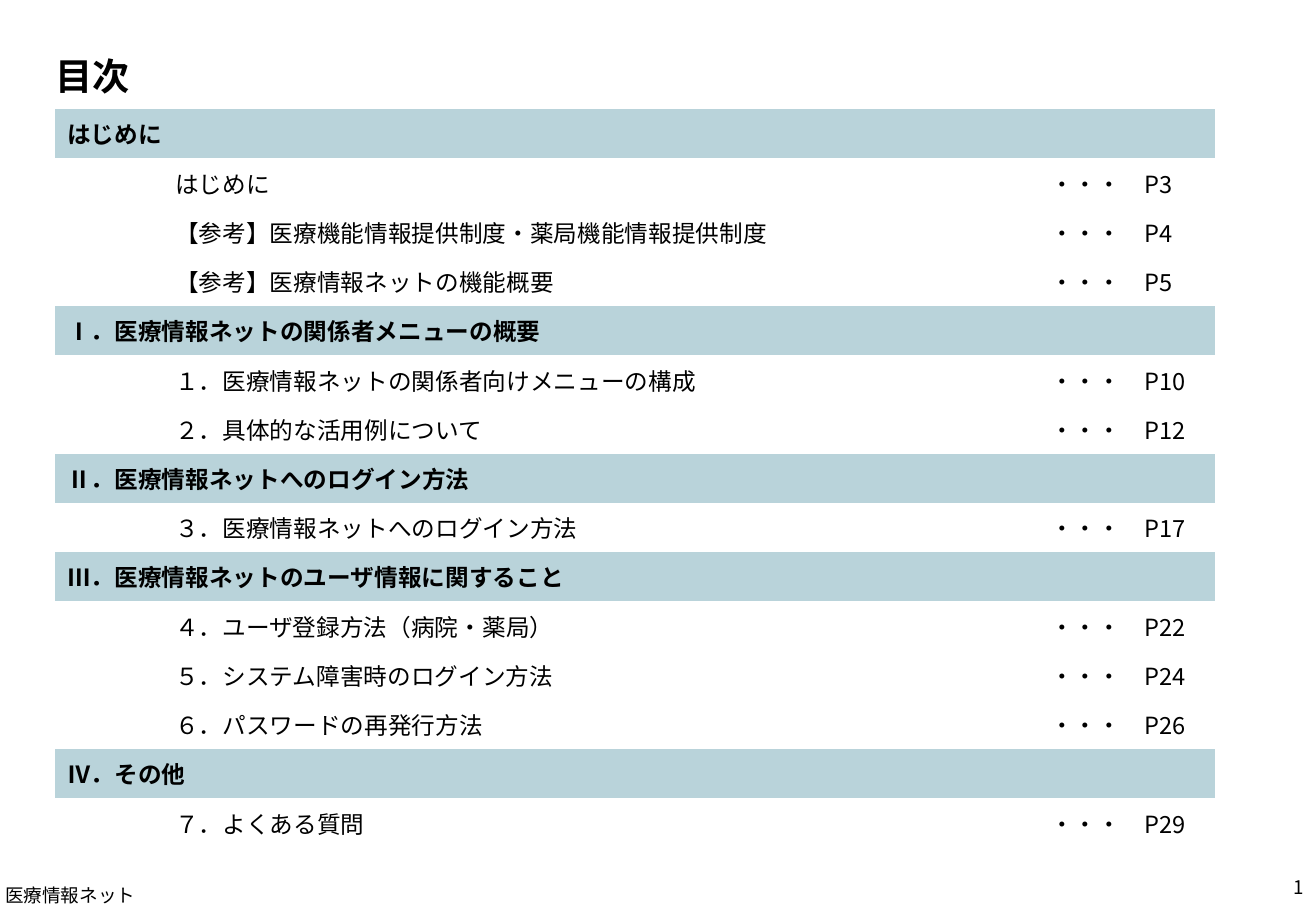
"""Build the table of contents slide."""
from lxml.etree import SubElement
from pptx import Presentation
from pptx.dml.color import RGBColor
from pptx.enum.text import MSO_ANCHOR, PP_ALIGN
from pptx.oxml.ns import qn
from pptx.util import Emu, Pt

TITLE = "目次"
FOOTER = "医療情報ネット"
PAGE_NUMBER = "1"
SECTIONS = [
    ("はじめに", [
        ("はじめに", 3),
        ("【参考】医療機能情報提供制度・薬局機能情報提供制度", 4),
        ("【参考】医療情報ネットの機能概要", 5),
    ]),
    ("Ⅰ．医療情報ネットの関係者メニューの概要", [
        ("１．医療情報ネットの関係者向けメニューの構成", 10),
        ("２．具体的な活用例について", 12),
    ]),
    ("Ⅱ．医療情報ネットへのログイン方法", [
        ("３．医療情報ネットへのログイン方法", 17),
    ]),
    ("Ⅲ．医療情報ネットのユーザ情報に関すること", [
        ("４．ユーザ登録方法（病院・薬局）", 22),
        ("５．システム障害時のログイン方法", 24),
        ("６．パスワードの再発行方法", 26),
    ]),
    ("Ⅳ．その他", [("７．よくある質問", 29)]),
]
FONT = "Noto Sans CJK JP"
BLACK, BAND = "000000", "B9D3DA"
ENTRY_SIZE = 14
NO_STYLE = "{2D5ABB26-0587-4C30-8999-92F81FD0307C}"
SCALE = 7526
SLIDE_SIZE = (1316, 911)
TITLE_BOX = (55, 44, 1208, 64)
TABLE_LEFT, TABLE_TOP, TABLE_HEIGHT = 55, 109, 739
COLUMNS = (108, 875, 177)
NUMBER_BOX = (1020, 863, 296, 48)
FOOTER_BOX = (0, 878, 153, 33)


def px(length):
    """Turn pixels into EMU."""
    return Emu(round(length * SCALE))


def color(value):
    """Turn a hex string into a colour."""
    return RGBColor.from_string(value)


def write(frame, text, size, bold=False, align=PP_ALIGN.LEFT):
    """Put one formatted line into a text frame."""
    frame.text = text
    para = frame.paragraphs[0]
    para.alignment = align
    for span in para.runs:
        span.font.size = Pt(size)
        span.font.bold = bold
        span.font.name = FONT
        span.font.color.rgb = color(BLACK)
        SubElement(span.font._element, qn("a:ea"), typeface=FONT)
    if not text:
        SubElement(para._p, qn("a:endParaRPr"), sz=str(size * 100))


def add_title(page):
    """Fill and place the title placeholder."""
    title = page.shapes.title
    title.left, title.top, title.width, title.height = map(px, TITLE_BOX)
    frame = title.text_frame
    frame.margin_left = 0
    frame.vertical_anchor = MSO_ANCHOR.MIDDLE
    write(frame, TITLE, 22.1, bold=True)


def add_contents(page):
    """Draw the sections and their entries as a table."""
    rows = []
    for heading, entries in SECTIONS:
        rows.append((heading, "", ""))
        rows += [("", name, f"・・・　P{number}") for name, number in entries]
    frame = page.shapes.add_table(
        len(rows), len(COLUMNS), px(TABLE_LEFT), px(TABLE_TOP),
        px(sum(COLUMNS)), px(TABLE_HEIGHT))
    table = frame.table
    table.first_row = table.horz_banding = False
    table._tbl.tblPr.find(qn("a:tableStyleId")).text = NO_STYLE
    for column, width in zip(table.columns, COLUMNS):
        column.width = px(width)
    for index, texts in enumerate(rows):
        table.rows[index].height = px(TABLE_HEIGHT / len(rows))
        heading = bool(texts[0])
        for column, text in enumerate(texts):
            cell = table.cell(index, column)
            cell.vertical_anchor = MSO_ANCHOR.MIDDLE
            write(cell.text_frame, text, ENTRY_SIZE, bold=heading)
            if heading:
                cell.fill.solid()
                cell.fill.fore_color.rgb = color(BAND)
            else:
                cell.fill.background()
        if heading:
            table.cell(index, 0).merge(table.cell(index, len(COLUMNS) - 1))


def add_label(page, place, text, size, anchor, align=PP_ALIGN.LEFT):
    """Add a text box and return its frame."""
    frame = page.shapes.add_textbox(*map(px, place)).text_frame
    frame.word_wrap = True
    frame.vertical_anchor = anchor
    write(frame, text, size, align=align)
    return frame


def main():
    """Assemble and save the deck."""
    deck = Presentation()
    deck.slide_width, deck.slide_height = map(px, SLIDE_SIZE)
    page = deck.slides.add_slide(deck.slide_layouts[5])
    add_title(page)
    add_contents(page)
    add_label(page, NUMBER_BOX, PAGE_NUMBER, 11.1, MSO_ANCHOR.MIDDLE, PP_ALIGN.RIGHT)
    footer = add_label(page, FOOTER_BOX, FOOTER, 11, MSO_ANCHOR.BOTTOM)
    footer.margin_left = footer.margin_right = px(5)
    footer.margin_top = footer.margin_bottom = px(5)
    deck.save("out.pptx")


if __name__ == "__main__":
    main()
